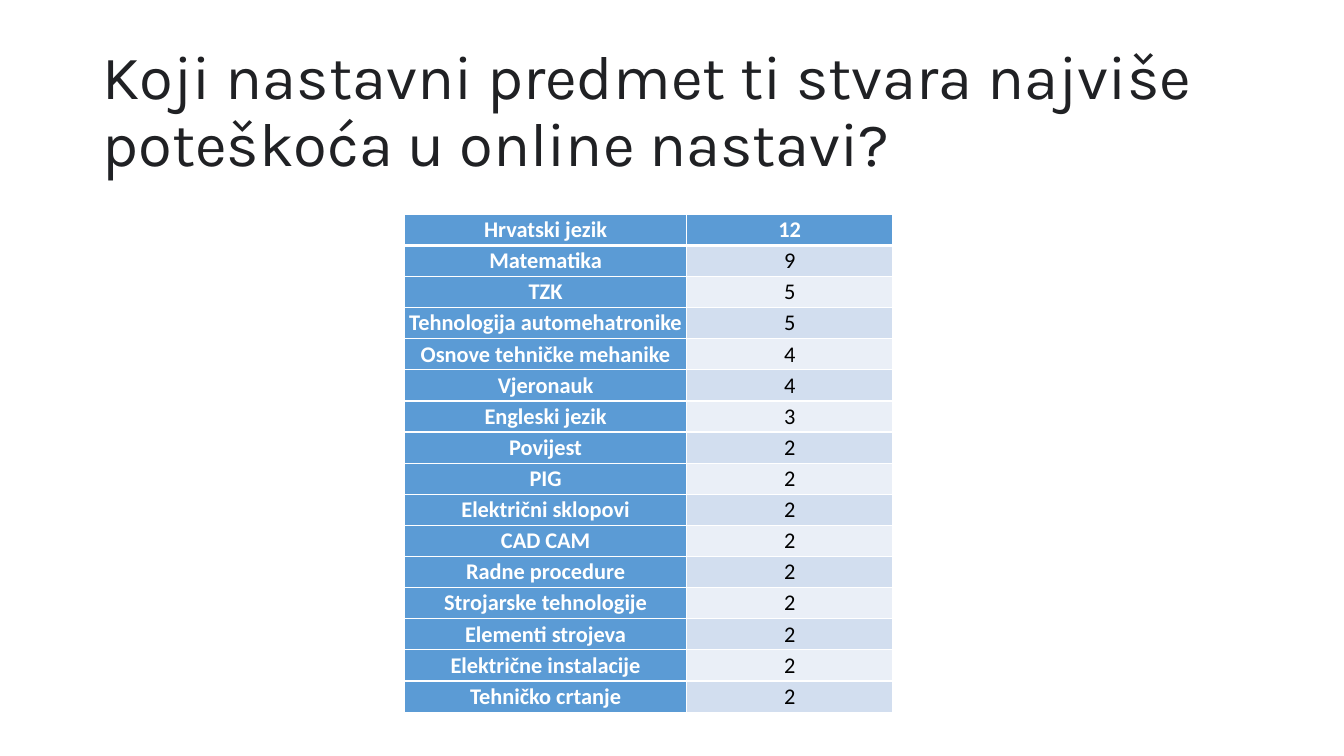
from dataclasses import dataclass

from lxml import etree
from pptx import Presentation
from pptx.dml.color import RGBColor
from pptx.enum.text import MSO_ANCHOR, MSO_AUTO_SIZE, PP_ALIGN
from pptx.oxml.ns import qn
from pptx.util import Cm, Pt

LEFT, CENTER = PP_ALIGN.LEFT, PP_ALIGN.CENTER
MIDDLE, TOP = MSO_ANCHOR.MIDDLE, MSO_ANCHOR.TOP
NO_FIT = MSO_AUTO_SIZE.NONE
TITLE_ONLY = 5

QUESTION = "Koji nastavni predmet ti stvara najviše poteškoća u online nastavi?"
SUBJECT_VOTES = [
    ("Hrvatski jezik", 12),
    ("Matematika", 9),
    ("TZK", 5),
    ("Tehnologija automehatronike", 5),
    ("Osnove tehničke mehanike", 4),
    ("Vjeronauk", 4),
    ("Engleski jezik", 3),
    ("Povijest", 2),
    ("PIG", 2),
    ("Električni sklopovi", 2),
    ("CAD CAM", 2),
    ("Radne procedure", 2),
    ("Strojarske tehnologije", 2),
    ("Elementi strojeva", 2),
    ("Električne instalacije", 2),
    ("Tehničko crtanje", 2),
]


@dataclass(frozen=True)
class Theme:
    title_font: str = "Karla"
    table_font: str = "Calibri"
    title_size: int = 44
    table_size: int = 16
    title_color: str = "202124"
    header_text: str = "FFFFFF"
    value_text: str = "000000"
    header_fill: str = "5B9BD5"
    bands: tuple = ("EAEFF7", "D2DEEF")
    border: str = "FFFFFF"
    border_width: int = 1
    header_rule: int = 3


def set_attrs(obj, values):
    for name, value in values.items():
        setattr(obj, name, value)


class SlideBuilder:
    def __init__(self, slide, theme):
        self.slide = slide
        self.theme = theme

    def add_text(self, tf, text, color, paragraph, font):
        p = tf.paragraphs[0]
        set_attrs(p, paragraph)
        r = p.add_run()
        r.text = text
        set_attrs(r.font, font)
        r.font.color.rgb = RGBColor.from_string(color)

    def title(self, text, left, top, width, height):
        t = self.theme
        sp = self.slide.shapes.title
        set_attrs(sp, {"left": Cm(left), "top": Cm(top),
                       "width": Cm(width), "height": Cm(height)})
        set_attrs(sp.text_frame, {"word_wrap": True, "auto_size": NO_FIT,
                                  "vertical_anchor": MIDDLE})
        self.add_text(sp.text_frame, text, t.title_color,
                      {"alignment": LEFT, "line_spacing": 0.9},
                      {"name": t.title_font, "size": Pt(t.title_size)})

    def borders(self, cell, row):
        t = self.theme
        widths = {"L": t.border_width, "R": t.border_width,
                  "T": t.header_rule if row == 1 else t.border_width,
                  "B": t.header_rule if row == 0 else t.border_width}
        tc_pr = cell._tc.get_or_add_tcPr()
        for side, width in widths.items():
            ln = etree.SubElement(tc_pr, qn(f"a:ln{side}"), w=str(Pt(width)))
            fill = etree.SubElement(ln, qn("a:solidFill"))
            etree.SubElement(fill, qn("a:srgbClr"), val=t.border)

    def cell(self, cell, text, row, is_header):
        t = self.theme
        set_attrs(cell, {"margin_left": Cm(0.08), "margin_right": Cm(0.08),
                         "margin_top": 0, "margin_bottom": 0,
                         "vertical_anchor": TOP})
        self.borders(cell, row)
        cell.fill.solid()
        fill = t.header_fill if is_header else t.bands[row % 2]
        cell.fill.fore_color.rgb = RGBColor.from_string(fill)
        self.add_text(cell.text_frame, text,
                      t.header_text if is_header else t.value_text,
                      {"alignment": CENTER, "line_spacing": 1.07},
                      {"name": t.table_font, "size": Pt(t.table_size),
                       "bold": is_header})

    def table(self, rows, left, top, col_widths, height):
        """Draw a table whose first row and first column are headers."""
        table = self.slide.shapes.add_table(
            len(rows), len(col_widths), Cm(left), Cm(top),
            Cm(sum(col_widths)), Cm(height)).table
        for column, width in zip(table.columns, col_widths):
            column.width = Cm(width)
        for i, values in enumerate(rows):
            for j, value in enumerate(values):
                self.cell(table.cell(i, j), str(value), i, i == 0 or j == 0)


def main():
    prs = Presentation()
    set_attrs(prs, {"slide_width": Cm(33.87), "slide_height": Cm(19.05)})
    slide = prs.slides.add_slide(prs.slide_layouts[TITLE_ONLY])
    builder = SlideBuilder(slide, Theme())
    builder.title(QUESTION, 2.33, 1.01, 29.21, 3.68)
    builder.table(SUBJECT_VOTES, 10.2, 5.4, (7.1, 5.2), 12.55)
    prs.save("out.pptx")


if __name__ == "__main__":
    main()
